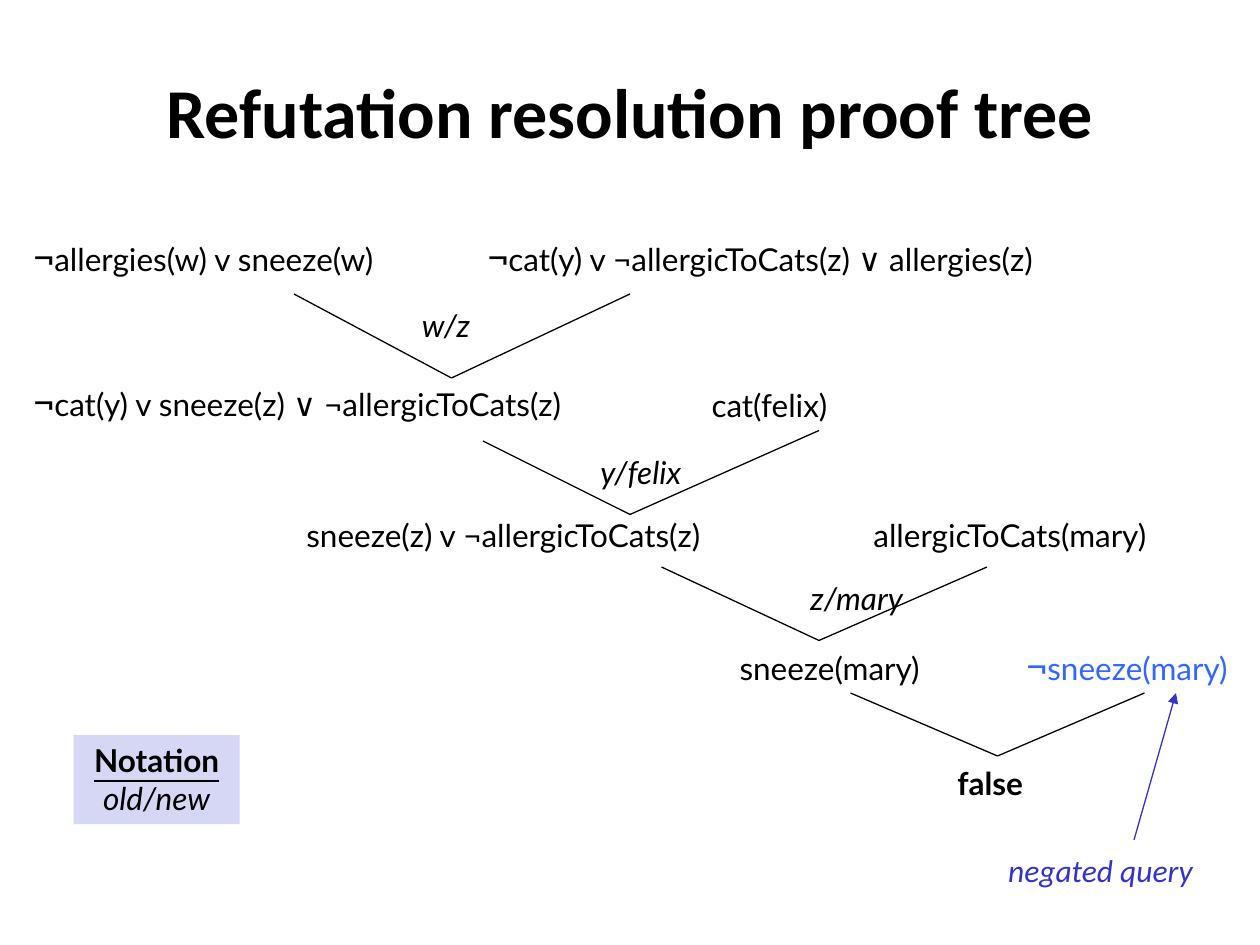
"""Build a slide with a refutation resolution proof tree."""
from lxml import etree
from pptx import Presentation
from pptx import util as u
from pptx.dml.color import RGBColor
from pptx.enum import shapes, text
from pptx.oxml import ns

COLORS = {"ink": "000000", "query": "3366FF", "note": "3333CC", "panel": "D6D6F5"}

CLAUSES = [
    ("¬allergies(w) v sneeze(w)", 12, 131, 228, "ink"),
    ("¬cat(y) v ¬allergicToCats(z) ∨ allergies(z)", 271.5, 131, 353.5, "ink"),
    ("¬cat(y) v sneeze(z) ∨ ¬allergicToCats(z)", 12, 214, 343, "ink"),
    ("cat(felix)", 399.5, 219.5, 84, "ink"),
    ("sneeze(z) v ¬allergicToCats(z)", 168, 294, 256, "ink"),
    ("allergicToCats(mary)", 492, 294, 179, "ink"),
    ("¬sneeze(mary)", 579.5, 364.5, 141, "query"),
    ("sneeze(mary)", 415.5, 369.5, 123, "ink"),
]

SUBSTITUTIONS = [
    ("w/z", 234, 174, 49),
    ("y/felix", 336, 258, 68.5),
    ("z/mary", 456, 330, 75.5),
]

RESOLUTIONS = [
    ((168, 168), (360, 168), (258, 216)),
    ((276, 252), (468, 246), (360, 294)),
    ((378, 324), (564, 324), (468, 366)),
    ((486, 396), (654, 396), (570, 432)),
]


def color(name):
    """Return the named colour."""
    return RGBColor.from_string(COLORS[name])


def add_span(para, words, tint="ink", **formats):
    """Add a run with the given font values."""
    span = para.add_run()
    span.text = words
    for key, value in ({"name": "Lato", "size": u.Pt(18)} | formats).items():
        setattr(span.font, key, value)
    span.font.color.rgb = color(tint)


def add_box(page, left, top, width, height, **formats):
    """Add a text box and return its first paragraph."""
    box = page.shapes.add_textbox(*map(u.Pt, (left, top, width, height)))
    box.text_frame.word_wrap = False
    for key, value in formats.items():
        setattr(box.text_frame, key, value)
    return box.text_frame.paragraphs[0]


def add_title(page, words):
    """Add the centred heading."""
    para = add_box(page, 54, 18, 612, 90, word_wrap=True,
                   vertical_anchor=text.MSO_ANCHOR.MIDDLE)
    para.alignment = text.PP_ALIGN.CENTER
    add_span(para, words, name="Calibri", size=u.Pt(40), bold=True)


def add_clause(page, words, left, top, width, tint="ink", **formats):
    """Add a formula, with a larger sign where it starts with a negation."""
    negated = words.startswith("¬")
    para = add_box(page, left, top, width, 34 if negated else 27)
    para.line_spacing = 0.9
    if negated:
        add_span(para, "¬", tint, name="Calibri", size=u.Pt(24))
    add_span(para, words.removeprefix("¬"), tint, **formats)


def add_line(page, start, end, tint="ink", arrow=False):
    """Add a thin straight line, with an optional arrowhead at its end."""
    line = page.shapes.add_connector(
        shapes.MSO_CONNECTOR.STRAIGHT, *map(u.Pt, start + end))
    line.line.width = u.Pt(0.75)
    line.line.color.rgb = color(tint)
    properties = line._element.spPr
    if arrow:
        outline = properties.find(ns.qn("a:ln"))
        etree.SubElement(outline, ns.qn("a:tailEnd"), type="triangle")
    etree.SubElement(properties, ns.qn("a:effectLst"))


def add_legend(page):
    """Add the shaded notation key."""
    panel = page.shapes.add_shape(
        shapes.MSO_SHAPE.RECTANGLE, *map(u.Pt, (42, 420, 95, 51)))
    panel.shadow.inherit = False
    panel.fill.solid()
    panel.fill.fore_color.rgb = color("panel")
    panel.line.fill.background()
    frame = panel.text_frame
    frame.word_wrap = False
    frame.vertical_anchor = text.MSO_ANCHOR.TOP
    heading, example = frame.paragraphs[0], frame.add_paragraph()
    for para in (heading, example):
        para.alignment = text.PP_ALIGN.CENTER
    add_span(heading, "Notation", bold=True, underline=True)
    add_span(example, "old/new", italic=True)


def main():
    """Build and save the deck."""
    deck = Presentation()
    deck.slide_width, deck.slide_height = u.Pt(720), u.Pt(540)
    page = deck.slides.add_slide(deck.slide_layouts[6])
    add_title(page, "Refutation resolution proof tree")
    for clause in CLAUSES:
        add_clause(page, *clause)
    add_clause(page, "false", 540, 435.5, 58.5, bold=True)
    for left, right, resolvent in RESOLUTIONS:
        add_line(page, left, resolvent)
        add_line(page, right, resolvent)
    for substitution in SUBSTITUTIONS:
        add_clause(page, *substitution, italic=True)
    note = add_box(page, 569, 483, 126, 29)
    add_span(note, "negated query", "note", name="Calibri", italic=True)
    add_line(page, (648, 480), (672, 396), "note", arrow=True)
    add_legend(page)
    deck.save("out.pptx")


if __name__ == "__main__":
    main()
